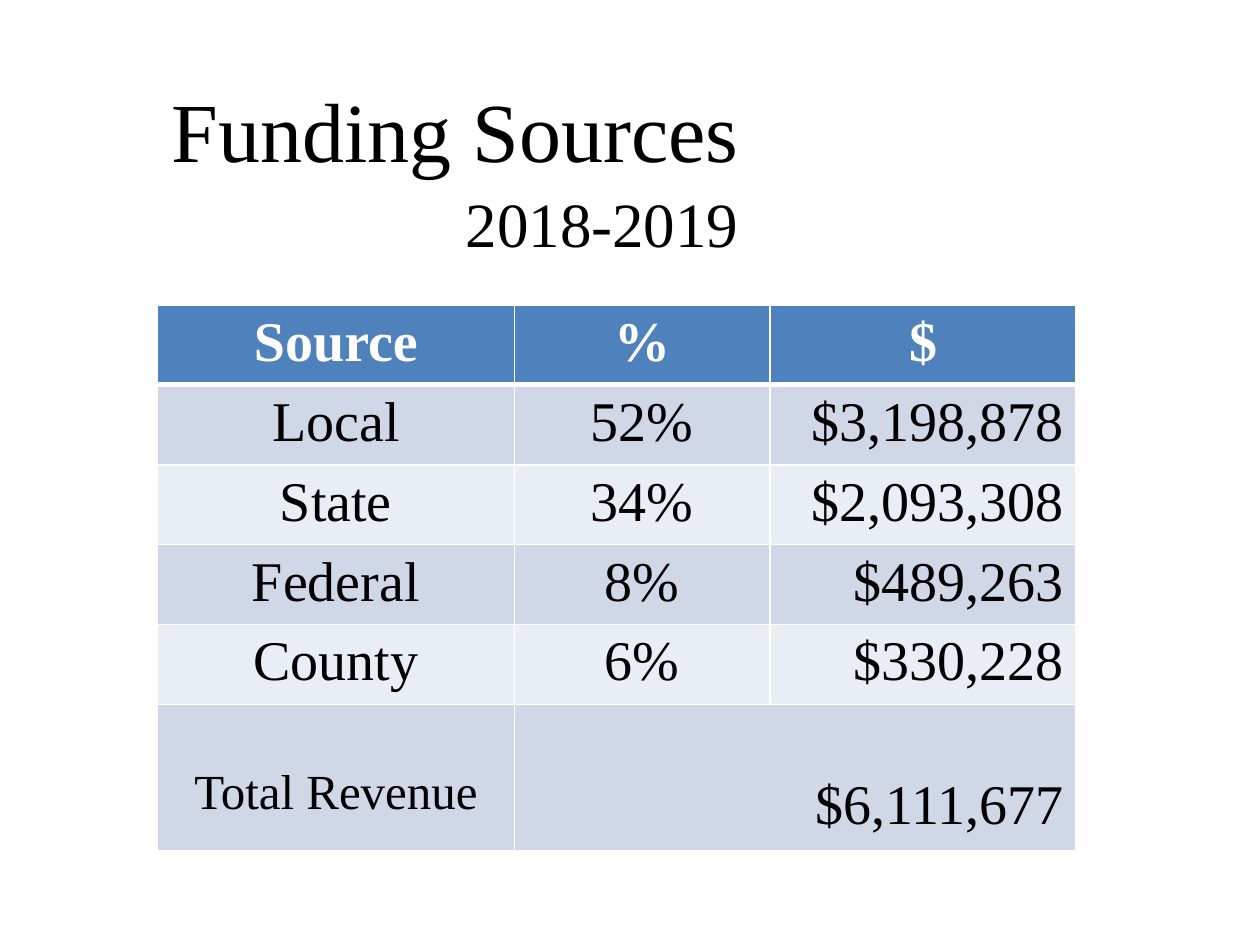
from lxml import etree
from pptx import Presentation
from pptx import util as u
from pptx.dml.color import RGBColor
from pptx.enum import text
from pptx.oxml import ns

FONT = "Times New Roman"
COLORS = {
    "text": "000000",
    "white": "FFFFFF",
    "header": "4F81BD",
    "band_dark": "D0D8E8",
    "band_light": "E9EDF4",
}
CENTER, RIGHT = text.PP_ALIGN.CENTER, text.PP_ALIGN.RIGHT
COLUMN_WIDTHS = [204, 146, 175]
ROW_HEIGHT, TOTAL_HEIGHT = 45.7, 83.5
FUNDING = [
    ("Source", "%", "$"),
    ("Local", "52%", "$3,198,878"),
    ("State", "34%", "$2,093,308"),
    ("Federal", "8%", "$489,263"),
    ("County", "6%", "$330,228"),
    ("Total Revenue", "$6,111,677", ""),
]


def write(paragraph, words, size, align, color="text", bold=False):
    paragraph.text = words
    paragraph.alignment = align
    font = paragraph.font
    font.name, font.size, font.bold = FONT, u.Pt(size), bold
    font.color.rgb = RGBColor.from_string(COLORS[color])


def add_title(slide):
    title = slide.shapes.title
    title.left, title.top = u.Pt(72), u.Pt(36)
    title.width, title.height = u.Pt(546), u.Pt(109)
    frame = title.text_frame
    frame.word_wrap = True
    frame.auto_size = text.MSO_AUTO_SIZE.NONE
    frame.vertical_anchor = text.MSO_ANCHOR.TOP
    frame.margin_top, frame.margin_right = u.Pt(8.6), u.Pt(196)
    write(frame.paragraphs[0], "Funding Sources", 48, RIGHT)
    years = frame.add_paragraph()
    write(years, "2018-2019", 36, RIGHT)
    years.space_before = u.Pt(3)


def style_cell(cell, fill, top=1, bottom=1):
    # Borders come before the fill in the cell properties
    properties = cell._tc.get_or_add_tcPr()
    for side, width in (("L", 1), ("R", 1), ("T", top), ("B", bottom)):
        line = etree.SubElement(properties, ns.qn(f"a:ln{side}"), w=str(u.Pt(width)))
        solid = etree.SubElement(line, ns.qn("a:solidFill"))
        etree.SubElement(solid, ns.qn("a:srgbClr"), val=COLORS["white"])
    cell.fill.solid()
    cell.fill.fore_color.rgb = RGBColor.from_string(COLORS[fill])


def add_funding_table(slide):
    last = len(FUNDING) - 1
    height = ROW_HEIGHT * last + TOTAL_HEIGHT
    table = slide.shapes.add_table(
        len(FUNDING), len(COLUMN_WIDTHS), u.Pt(90), u.Pt(174.2),
        u.Pt(sum(COLUMN_WIDTHS)), u.Pt(height)).table
    for column, width in zip(table.columns, COLUMN_WIDTHS):
        column.width = u.Pt(width)

    for r, values in enumerate(FUNDING):
        table.rows[r].height = u.Pt(TOTAL_HEIGHT if r == last else ROW_HEIGHT)
        header = r == 0
        fill = "header" if header else "band_dark" if r % 2 else "band_light"
        for c, value in enumerate(values):
            cell = table.cell(r, c)
            style_cell(cell, fill, top=3 if r == 1 else 1, bottom=3 if header else 1)
            if value:
                align = RIGHT if value.startswith("$") and not header else CENTER
                write(cell.text_frame.paragraphs[0], value, 32, align,
                      "white" if header else "text", header)

    # Total row: smaller label, amount across the last two columns
    label, amount = table.cell(last, 0), table.cell(last, 1)
    label.text_frame.paragraphs[0].font.size = u.Pt(28)
    label.margin_top, amount.margin_top = u.Pt(35), u.Pt(40)
    amount.merge(table.cell(last, 2))


def main():
    deck = Presentation()
    deck.slide_width, deck.slide_height = u.Pt(720), u.Pt(540)
    slide = deck.slides.add_slide(deck.slide_layouts.get_by_name("Title Only"))
    add_title(slide)
    add_funding_table(slide)
    deck.save("out.pptx")


if __name__ == "__main__":
    main()
